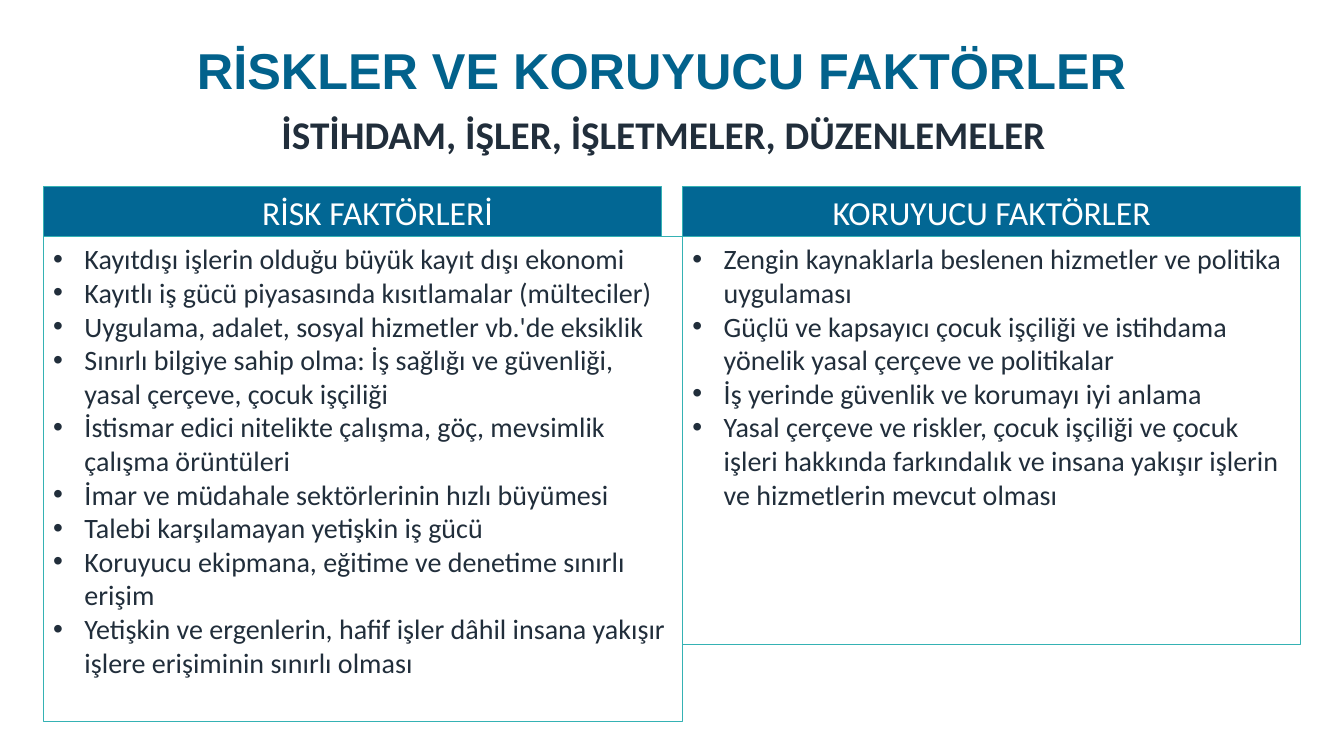
from lxml.etree import SubElement
from pptx import Presentation
from pptx.dml.color import RGBColor
from pptx.enum.shapes import MSO_SHAPE
from pptx.enum.text import MSO_ANCHOR as Anchor, PP_ALIGN as Align
from pptx.oxml.ns import qn
from pptx.util import Inches, Pt

TITLE_BLUE, HEADER_BLUE, TEAL = "02628C", "026794", "35B2B4"
DARK, WHITE = "212E3B", "FFFFFF"

LEFT_COLUMN, RIGHT_COLUMN, COLUMN_WIDTH = 0.43, 6.77, 6.13
HEADER_TOP, HEADER_HEIGHT = 1.85, 0.5

RISKS = [
    "Kayıtdışı işlerin olduğu büyük kayıt dışı ekonomi",
    "Kayıtlı iş gücü piyasasında kısıtlamalar (mülteciler)",
    "Uygulama, adalet, sosyal hizmetler vb.'de eksiklik",
    "Sınırlı bilgiye sahip olma: İş sağlığı ve güvenliği, yasal çerçeve, çocuk işçiliği",
    "İstismar edici nitelikte çalışma, göç, mevsimlik çalışma örüntüleri",
    "İmar ve müdahale sektörlerinin hızlı büyümesi",
    "Talebi karşılamayan yetişkin iş gücü",
    "Koruyucu ekipmana, eğitime ve denetime sınırlı erişim",
    "Yetişkin ve ergenlerin, hafif işler dâhil insana yakışır işlere erişiminin sınırlı olması",
]
PROTECTIONS = [
    "Zengin kaynaklarla beslenen hizmetler ve politika uygulaması",
    "Güçlü ve kapsayıcı çocuk işçiliği ve istihdama yönelik yasal çerçeve ve politikalar",
    "İş yerinde güvenlik ve korumayı iyi anlama",
    "Yasal çerçeve ve riskler, çocuk işçiliği ve çocuk işleri hakkında farkındalık "
    "ve insana yakışır işlerin ve hizmetlerin mevcut olması",
]


def color(value):
    return RGBColor.from_string(value)


def set_indent(paragraph, margin, first_line=0):
    properties = paragraph._p.get_or_add_pPr()
    properties.set("marL", str(Inches(margin)))
    properties.set("indent", str(Inches(first_line)))
    return properties


def add_bullet(paragraph):
    properties = set_indent(paragraph, 0.31, -0.31)
    bullet_color = SubElement(properties, qn("a:buClr"))
    SubElement(bullet_color, qn("a:srgbClr"), val=DARK)
    SubElement(properties, qn("a:buFont"), typeface="Arial")
    SubElement(properties, qn("a:buChar"), char="•")


class FactorSlide:
    def __init__(self, slide):
        self.slide = slide

    def set_text(self, shape, lines, size, text_color, font="Calibri", bold=False,
                 align=Align.LEFT, anchor=Anchor.TOP):
        frame = shape.text_frame
        frame.word_wrap = True
        frame.vertical_anchor = anchor
        frame.text = "\n".join(lines)
        for paragraph in frame.paragraphs:
            paragraph.alignment = align
            for run in paragraph.runs:
                run.font.name = font
                run.font.size = Pt(size)
                run.font.bold = bold
                run.font.color.rgb = color(text_color)
        return frame.paragraphs

    def heading(self, box, text, size, text_color, **style):
        shape = self.slide.shapes.add_textbox(*map(Inches, box))
        return self.set_text(shape, [text], size, text_color, bold=True,
                             align=Align.CENTER, **style)[0]

    def rectangle(self, box, fill=None):
        shape = self.slide.shapes.add_shape(MSO_SHAPE.RECTANGLE, *map(Inches, box))
        shape.shadow.inherit = False
        if fill:
            shape.fill.solid()
            shape.fill.fore_color.rgb = color(fill)
        else:
            shape.fill.background()
        shape.line.color.rgb = color(TEAL)
        shape.line.width = Pt(0.75)
        return shape

    def bullet_box(self, box, lines):
        for paragraph in self.set_text(self.rectangle(box), lines, 20, DARK):
            add_bullet(paragraph)

    def column_header(self, left, text):
        box = (left, HEADER_TOP, COLUMN_WIDTH, HEADER_HEIGHT)
        shape = self.rectangle(box, HEADER_BLUE)
        return self.set_text(shape, [text], 24, WHITE, align=Align.CENTER)[0]


def main():
    presentation = Presentation()
    presentation.slide_width = Inches(13.33)
    presentation.slide_height = Inches(7.5)
    page = FactorSlide(presentation.slides.add_slide(presentation.slide_layouts[6]))

    title = page.heading((1.81, 0, 9.51, 1.45), "RİSKLER VE KORUYUCU FAKTÖRLER",
                         36, TITLE_BLUE, font="Arial", anchor=Anchor.MIDDLE)
    title.line_spacing = 0.9

    body_top = HEADER_TOP + HEADER_HEIGHT
    page.bullet_box((LEFT_COLUMN, body_top, RIGHT_COLUMN - LEFT_COLUMN, 4.81), RISKS)
    risk_header = page.column_header(LEFT_COLUMN, "RİSK FAKTÖRLERİ")
    set_indent(risk_header, 0.5)
    page.bullet_box((RIGHT_COLUMN, body_top, COLUMN_WIDTH, 4.04), PROTECTIONS)
    page.column_header(RIGHT_COLUMN, "KORUYUCU FAKTÖRLER")

    subtitle = page.heading((1.35, 1.05, 9.96, 1.04),
                            "İSTİHDAM, İŞLER, İŞLETMELER, DÜZENLEMELER", 28, DARK)
    set_indent(subtitle, 0.5)

    presentation.save("out.pptx")


if __name__ == "__main__":
    main()
